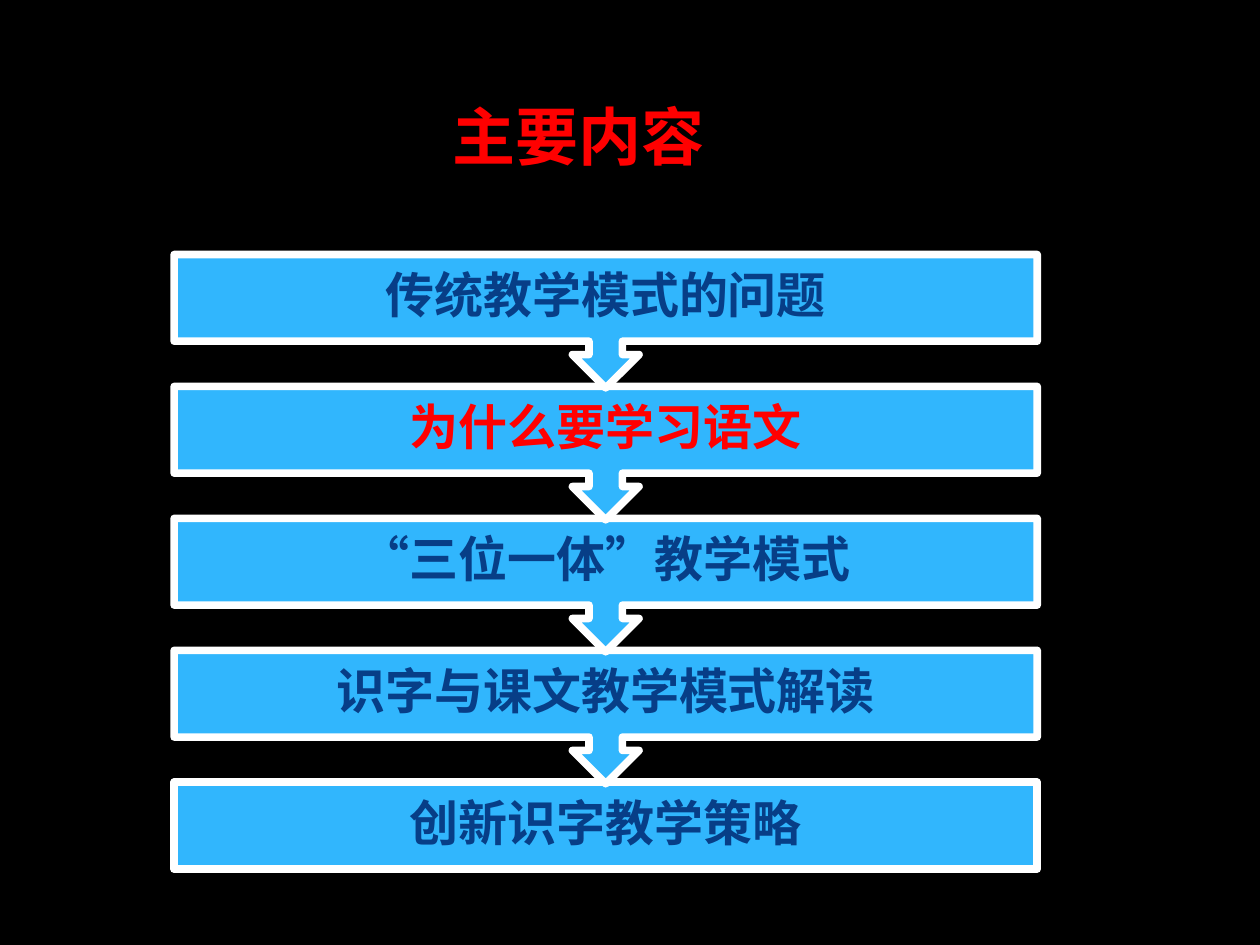
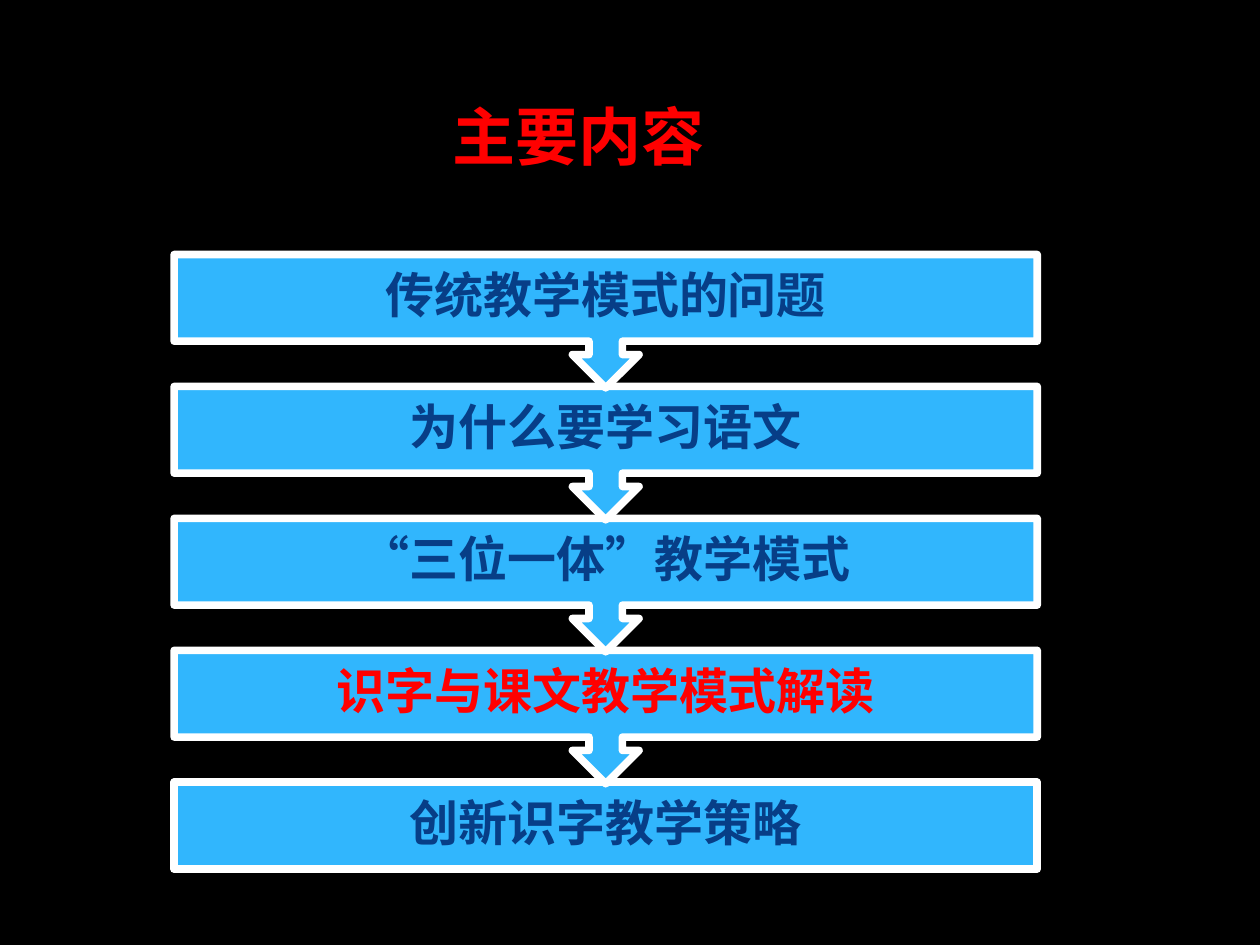
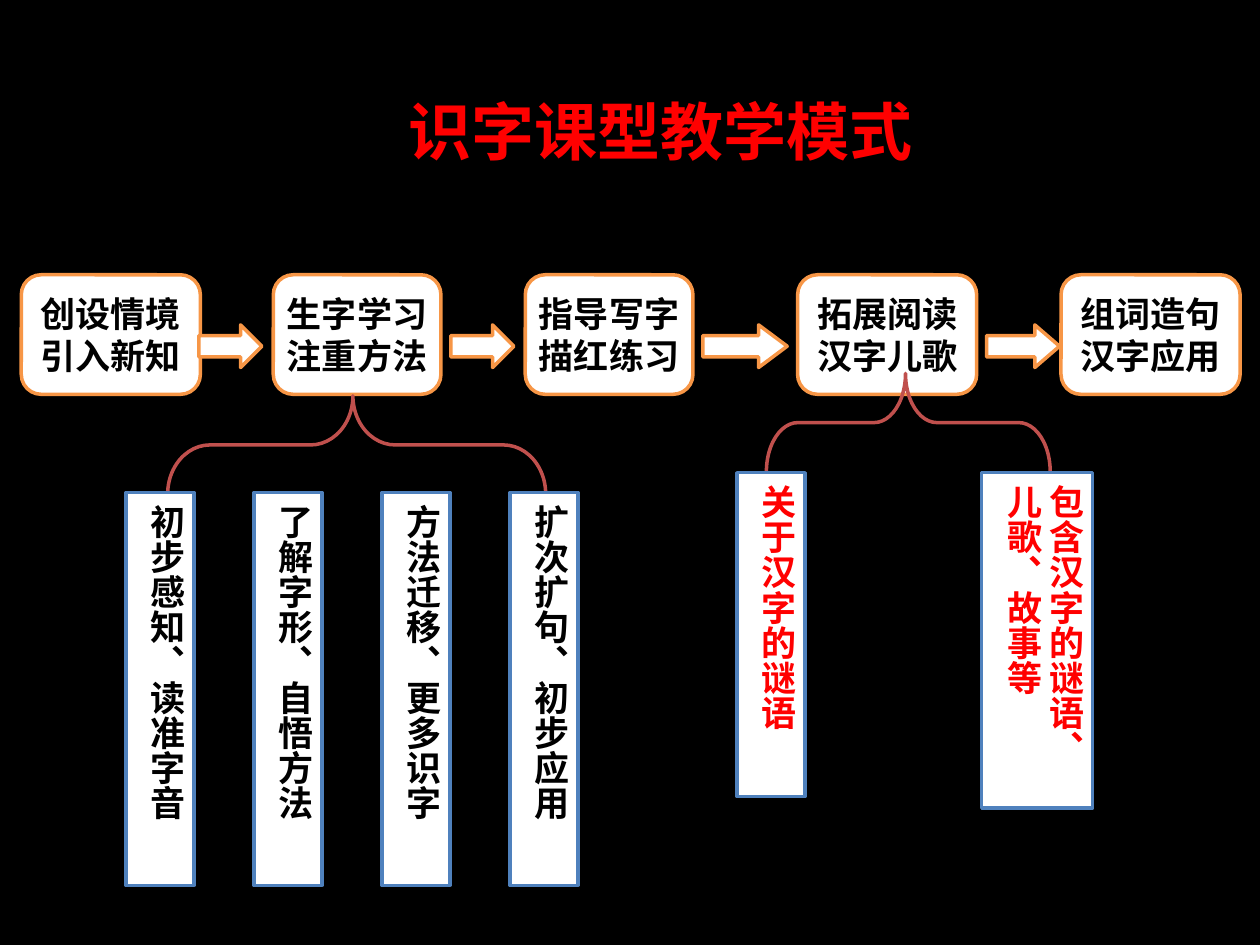
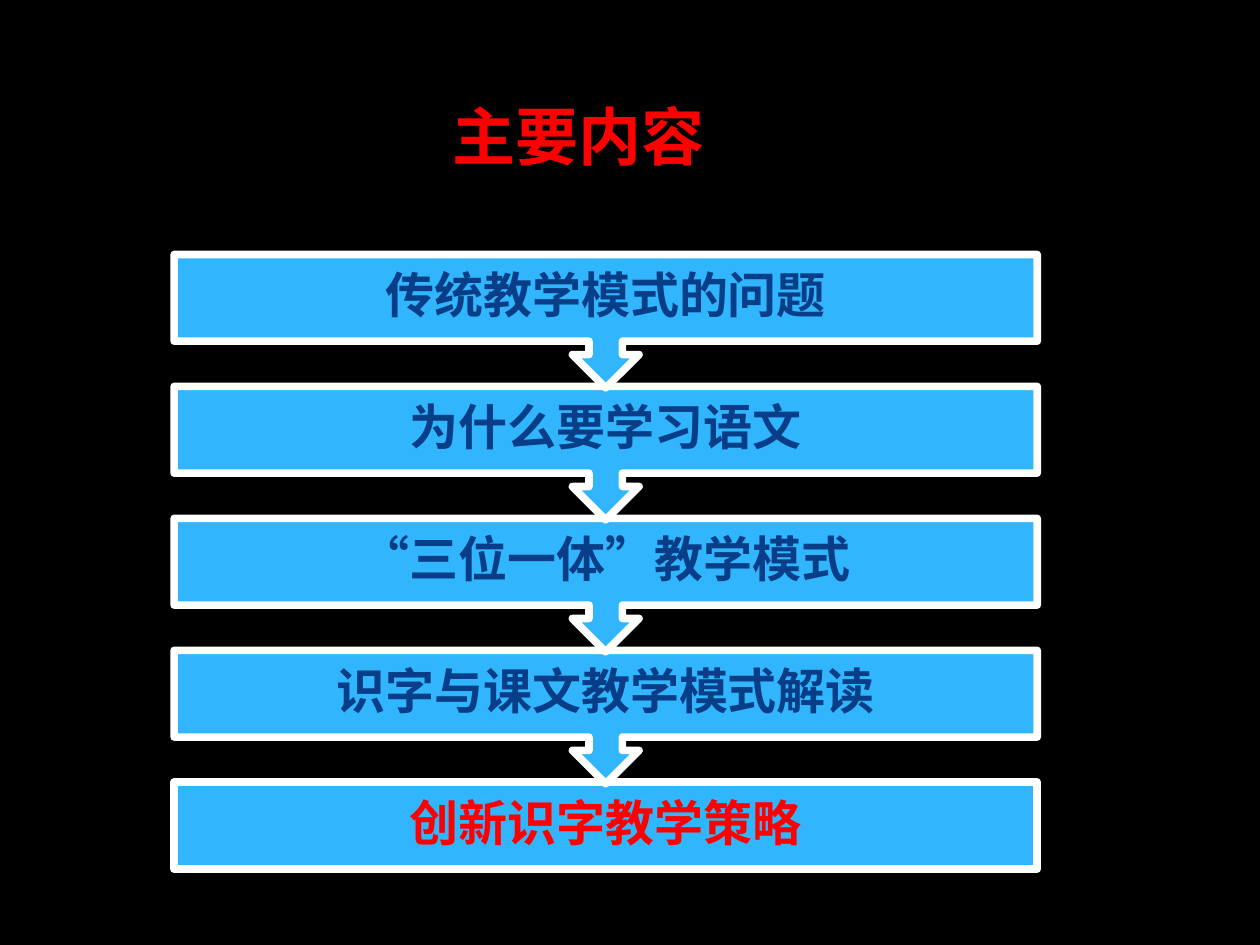
from dataclasses import dataclass

from pptx import Presentation
from pptx.dml.color import RGBColor
from pptx.enum.shapes import MSO_SHAPE as Preset
from pptx.enum.text import MSO_ANCHOR as Anchor
from pptx.enum.text import MSO_AUTO_SIZE as AutoSize
from pptx.enum.text import PP_ALIGN as Align
from pptx.oxml import parse_xml
from pptx.oxml.ns import nsdecls
from pptx.shapes.base import BaseShape
from pptx.slide import Slide
from pptx.text.text import TextFrame
from pptx.util import Cm, Pt


@dataclass(frozen=True)
class Theme:
    background: str = "000000"
    accent: str = "FF0000"
    topic_fill: str = "31B6FD"
    topic_text: str = "073E87"
    paper: str = "FFFFFF"
    ink: str = "000000"
    step_line: str = "F79646"
    brace_line: str = "C0504D"
    detail_line: str = "4F81BD"
    font: str = "Noto Sans CJK SC"
    topic_font: str = "Cabin"
    title_size: float = 36
    topic_size: float = 28
    step_size: float = 20
    topic_line_width: float = 4.33
    line_width: float = 2


@dataclass(frozen=True)
class Box:
    left: float
    top: float
    width: float
    height: float

    def lengths(self) -> tuple[Cm, Cm, Cm, Cm]:
        return Cm(self.left), Cm(self.top), Cm(self.width), Cm(self.height)


@dataclass(frozen=True)
class Step:
    left: float
    width: float
    lines: tuple[str, str]


@dataclass(frozen=True)
class Arrow:
    left: float
    width: float
    head: float


@dataclass(frozen=True)
class Brace:
    box: Box
    curve: float


@dataclass(frozen=True)
class Detail:
    box: Box
    text: str
    color: str


THEME = Theme()
TOPICS = (
    "传统教学模式的问题",
    "为什么要学习语文",
    "“三位一体”教学模式",
    "识字与课文教学模式解读",
    "创新识字教学策略",
)
TOPIC_LEFT, TOPIC_TOP, TOPIC_WIDTH = 3.51, 5.13, 17.4
TOPIC_PITCH, TOPIC_HEIGHT, CALLOUT_HEIGHT = 2.66, 1.75, 2.69
TOPIC_INSET = 0.56

STEP_TOP, STEP_HEIGHT = 5.54, 2.41
STEPS = (
    Step(0.43, 3.61, ("创设情境", "引入新知")),
    Step(5.51, 3.38, ("生字学习", "注重方法")),
    Step(10.59, 3.38, ("指导写字", "描红练习")),
    Step(16.08, 3.61, ("拓展阅读", "汉字儿歌")),
    Step(21.39, 3.61, ("组词造句", "汉字应用")),
)
ARROW_TOP, ARROW_HEIGHT = 6.55, 0.86
ARROWS = (
    Arrow(4.01, 1.27, 0.5),
    Arrow(9.09, 1.27, 0.5),
    Arrow(14.17, 1.7, 0.67),
    Arrow(19.89, 1.47, 0.58),
)
BRACES = (
    Brace(Box(6.2, 5.16, 1.98, 7.62), 0.43),
    Brace(Box(17.32, 5.66, 1.98, 5.72), 0.32),
)
LEARNING_PHASES = (
    "初步感知、读准字音",
    "了解字形、自悟方法",
    "方法迁移、更多识字",
    "扩次扩句、初步应用",
)
DETAILS = (
    Detail(Box(14.86, 9.53, 1.37, 6.53), "关于汉字的谜语", THEME.accent),
    Detail(Box(19.79, 9.53, 2.24, 6.76), "包含汉字的谜语、儿歌、故事等", THEME.accent),
    *(
        Detail(Box(2.54 + 2.58 * index, 9.93, 1.37, 7.92), phase, THEME.ink)
        for index, phase in enumerate(LEARNING_PHASES)
    ),
)


def write(
    frame: TextFrame,
    *lines: str,
    size: float,
    color: str,
    font: str = THEME.font,
    align: Align = Align.CENTER,
    anchor: Anchor = Anchor.MIDDLE,
    wrap: bool = True,
    inset: float | None = None,
    line_spacing: float | None = None,
    space_before: float | None = None,
) -> None:
    frame.auto_size = AutoSize.NONE
    frame.word_wrap = wrap
    frame.vertical_anchor = anchor
    if inset is not None:
        frame.margin_left = frame.margin_right = Cm(inset)
        frame.margin_top = frame.margin_bottom = Cm(inset)
    for index, line in enumerate(lines):
        paragraph = frame.add_paragraph() if index else frame.paragraphs[0]
        paragraph.alignment = align
        paragraph.line_spacing = line_spacing
        if space_before is not None:
            paragraph.space_before = Pt(space_before)
        run = paragraph.add_run()
        run.text = line
        run.font.size = Pt(size)
        run.font.bold = True
        run.font.name = font
        run.font.color.rgb = RGBColor.from_string(color)
        properties = run.font._element
        properties.set("lang", "zh-CN")
        properties.append(parse_xml(f'<a:ea {nsdecls("a")} typeface="{THEME.font}"/>'))


def paint(shape: BaseShape, fill: str | None, line: str, width: float = THEME.line_width) -> None:
    if fill:
        shape.fill.solid()
        shape.fill.fore_color.rgb = RGBColor.from_string(fill)
    else:
        shape.fill.background()
    shape.line.color.rgb = RGBColor.from_string(line)
    shape.line.width = Pt(width)
    shape.shadow.inherit = False


def add_titled_slide(deck: Presentation, heading: str, box: Box, **text_format) -> Slide:
    slide = deck.slides.add_slide(deck.slide_layouts[5])
    title = slide.shapes.title
    title.left, title.top, title.width, title.height = box.lengths()
    write(title.text_frame, heading, size=THEME.title_size, color=THEME.accent, **text_format)
    return slide


def add_overview(deck: Presentation, current: int) -> None:
    slide = add_titled_slide(
        deck, "主要内容", Box(0.99, 0.64, 21.34, 2.97), anchor=Anchor.BOTTOM, space_before=4
    )
    diagram = slide.shapes.add_group_shape().shapes
    last = len(TOPICS) - 1
    for index in range(last, -1, -1):
        top = TOPIC_TOP + TOPIC_PITCH * index
        label_box = Box(TOPIC_LEFT, top, TOPIC_WIDTH, TOPIC_HEIGHT)
        if index == last:
            panel = diagram.add_shape(Preset.RECTANGLE, *label_box.lengths())
        else:
            callout_box = Box(TOPIC_LEFT, top, TOPIC_WIDTH, CALLOUT_HEIGHT)
            panel = diagram.add_shape(Preset.UP_ARROW_CALLOUT, *callout_box.lengths())
            panel.rotation = 180
        paint(panel, THEME.topic_fill, THEME.paper, THEME.topic_line_width)
        label = diagram.add_textbox(*label_box.lengths())
        write(
            label.text_frame,
            TOPICS[index],
            size=THEME.topic_size,
            color=THEME.accent if index == current else THEME.topic_text,
            font=THEME.topic_font,
            inset=TOPIC_INSET,
            line_spacing=0.9,
        )


def add_step(slide: Slide, step: Step) -> None:
    box = Box(step.left, STEP_TOP, step.width, STEP_HEIGHT)
    card = slide.shapes.add_shape(Preset.ROUNDED_RECTANGLE, *box.lengths())
    paint(card, THEME.paper, THEME.step_line)
    write(card.text_frame, *step.lines, size=THEME.step_size, color=THEME.ink, wrap=False)


def add_arrow(slide: Slide, arrow: Arrow) -> None:
    box = Box(arrow.left, ARROW_TOP, arrow.width, ARROW_HEIGHT)
    pointer = slide.shapes.add_shape(Preset.RIGHT_ARROW, *box.lengths())
    pointer.adjustments[1] = arrow.head
    paint(pointer, THEME.paper, THEME.step_line)


def add_brace(slide: Slide, brace: Brace) -> None:
    bracket = slide.shapes.add_shape(Preset.LEFT_BRACE, *brace.box.lengths())
    bracket.rotation = 90
    bracket.adjustments[0] = brace.curve
    bracket.adjustments[1] = 0.51
    paint(bracket, None, THEME.brace_line)


def add_detail(slide: Slide, detail: Detail) -> None:
    strip = slide.shapes.add_shape(Preset.RECTANGLE, *detail.box.lengths())
    paint(strip, THEME.paper, THEME.detail_line)
    write(
        strip.text_frame,
        detail.text,
        size=THEME.step_size,
        color=detail.color,
        align=Align.LEFT,
        anchor=Anchor.TOP,
    )
    strip.text_frame._txBody.bodyPr.set("vert", "eaVert")


def add_literacy_model(deck: Presentation) -> None:
    slide = add_titled_slide(
        deck, "识字课型教学模式", Box(7.92, 1.73, 10.77, 1.8), anchor=Anchor.TOP, wrap=False
    )
    for step in STEPS:
        add_step(slide, step)
    for arrow in ARROWS:
        add_arrow(slide, arrow)
    for brace in BRACES:
        add_brace(slide, brace)
    for detail in DETAILS:
        add_detail(slide, detail)


def main() -> None:
    deck = Presentation()
    deck.slide_width, deck.slide_height = Cm(25.4), Cm(19.05)
    backdrop = deck.slide_master.background.fill
    backdrop.solid()
    backdrop.fore_color.rgb = RGBColor.from_string(THEME.background)
    add_overview(deck, current=1)
    add_overview(deck, current=3)
    add_literacy_model(deck)
    add_overview(deck, current=4)
    deck.save("out.pptx")


if __name__ == "__main__":
    main()
